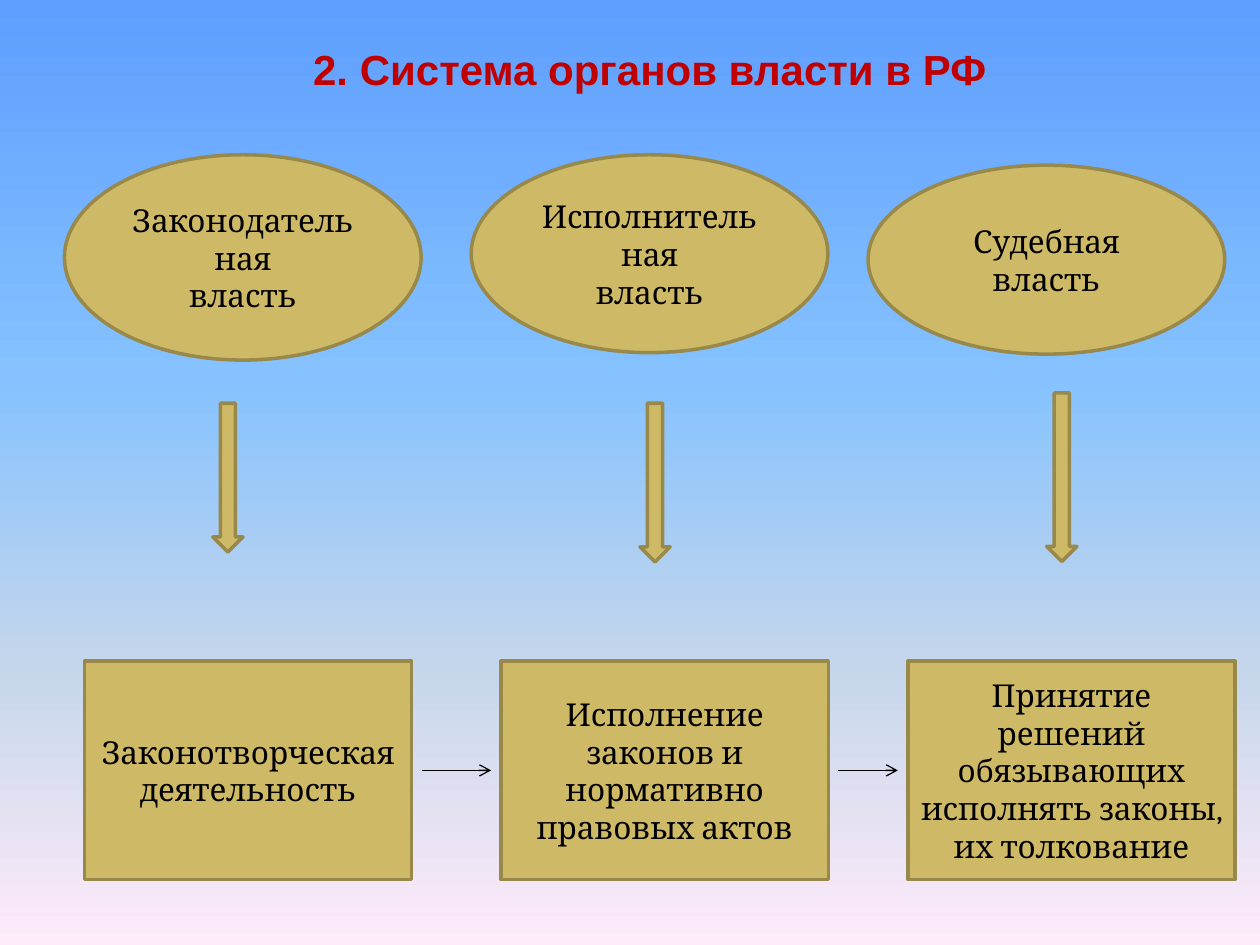
from lxml.etree import SubElement
from pptx import Presentation
from pptx.dml.color import RGBColor
from pptx.enum.shapes import MSO_CONNECTOR, MSO_SHAPE as SHAPE
from pptx.enum.text import MSO_ANCHOR as ANCHOR, MSO_AUTO_SIZE, PP_ALIGN as ALIGN
from pptx.oxml.ns import qn
from pptx.util import Cm, Pt

GOLD = RGBColor(0xCE, 0xB9, 0x66)
BRONZE = RGBColor(0x98, 0x89, 0x4B)
RED = RGBColor(0xC0, 0x00, 0x00)
BLACK = RGBColor(0x00, 0x00, 0x00)
SKY = [
    (0, RGBColor(0x5E, 0x9E, 0xFF)),
    (40, RGBColor(0x85, 0xC2, 0xFF)),
    (70, RGBColor(0xC4, 0xD6, 0xEB)),
    (100, RGBColor(0xFF, 0xEB, 0xFA)),
]


class Board:
    """Style and drawing methods for one slide; lengths are in centimetres."""

    title_font, body_font = "Arial", "Cambria"
    title_size, body_size = Pt(24), Pt(18)

    def __init__(self, prs):
        self.s = prs.slides.add_slide(prs.slide_layouts[5])

    def background(self, stops):
        fill = self.s.background.fill
        fill.gradient()
        fill.gradient_angle = 270
        gs_list = next(self.s.element.iter(qn("a:gsLst")))
        for gs in list(gs_list):
            gs_list.remove(gs)
        for percent, color in stops:
            gs = SubElement(gs_list, qn("a:gs"), pos=str(percent * 1000))
            SubElement(gs, qn("a:srgbClr"), val=str(color))

    def text(self, tf, text, font, size, color, bold=False):
        tf.text = text
        tf.word_wrap = True
        tf.vertical_anchor = ANCHOR.MIDDLE
        for p in tf.paragraphs:
            p.alignment = ALIGN.CENTER
            for r in p.runs:
                r.font.name, r.font.size, r.font.bold = font, size, bold
                r.font.color.rgb = color

    def title(self, text, x, y, w, h):
        sp = self.s.shapes.title
        sp.left, sp.top, sp.width, sp.height = Cm(x), Cm(y), Cm(w), Cm(h)
        sp.text_frame.auto_size = MSO_AUTO_SIZE.NONE
        self.text(sp.text_frame, text, self.title_font, self.title_size, RED, True)

    def shape(self, kind, x, y, w, h, text=""):
        sp = self.s.shapes.add_shape(kind, Cm(x), Cm(y), Cm(w), Cm(h))
        sp.shadow.inherit = False
        sp.fill.solid()
        sp.fill.fore_color.rgb = GOLD
        sp.line.color.rgb = BRONZE
        sp.line.width = Pt(2)
        if text:
            self.text(sp.text_frame, text, self.body_font, self.body_size, BLACK)

    def arrow(self, x1, x2, y):
        line = self.s.shapes.add_connector(
            MSO_CONNECTOR.STRAIGHT, Cm(x1), Cm(y), Cm(x2), Cm(y))
        line.line.color.rgb = BLACK
        line.line.width = Pt(0.75)
        SubElement(line.line._get_or_add_ln(), qn("a:tailEnd"), type="arrow")
        SubElement(line.element.spPr, qn("a:effectLst"))


def main():
    prs = Presentation()
    prs.slide_width, prs.slide_height = Cm(25.4), Cm(19.05)
    board = Board(prs)
    board.background(SKY)
    board.title("2. Система органов власти в РФ", 1.8, 0.75, 22.6, 1.28)

    # Branches of power: left, top, height, text
    branches = [
        (1.3, 3.12, 4.14, "Законодательная\nвласть"),
        (9.5, 3.12, 3.99, "Исполнительная\nвласть"),
        (17.5, 3.33, 3.81, "Судебная\nвласть"),
    ]
    for x, y, h, text in branches:
        board.shape(SHAPE.OVAL, x, y, 7.19, h, text)

    # Block arrows from each branch down to its function
    for x, y, h in [(4.29, 8.13, 3), (12.9, 8.13, 3.2), (21.1, 7.92, 3.4)]:
        board.shape(SHAPE.DOWN_ARROW, x, y, 0.61, h)

    # Functions of the branches
    top, width, height = 13.33, 6.6, 4.4
    functions = [
        (1.7, "Законотворческая деятельность"),
        (10.1, "Исполнение законов и нормативно правовых актов"),
        (18.3, "Принятие решений обязывающих исполнять законы, их толкование"),
    ]
    for x, text in functions:
        board.shape(SHAPE.RECTANGLE, x, top, width, height, text)

    # Thin arrows in the gaps between neighbouring functions
    gap = 0.2
    for (x, _), (next_x, _) in zip(functions, functions[1:]):
        board.arrow(x + width + gap, next_x - gap, top + height / 2)

    prs.save("out.pptx")


if __name__ == "__main__":
    main()
